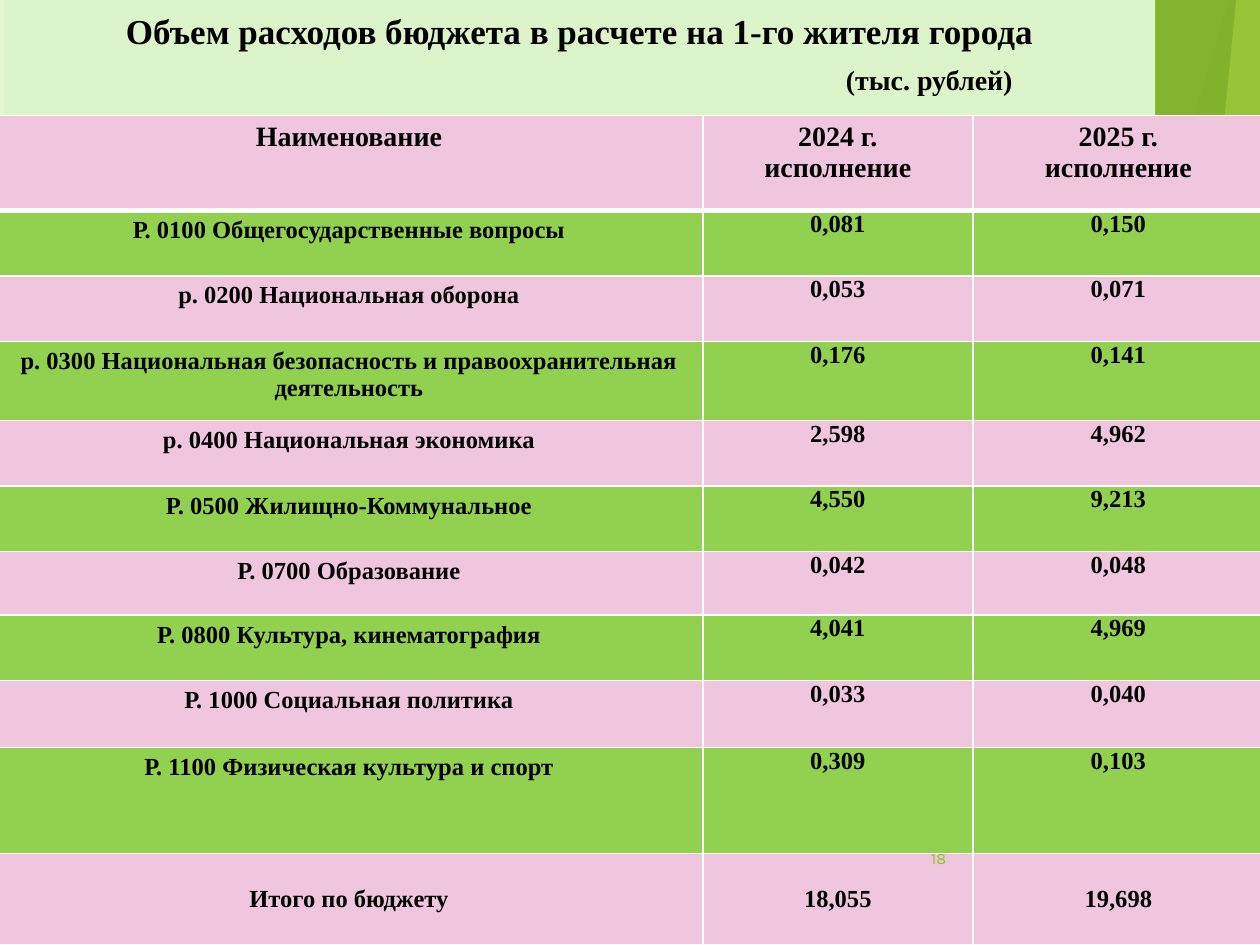
from lxml import etree
from pptx import Presentation
from pptx.dml.color import RGBColor
from pptx.enum import shapes, text
from pptx.oxml.ns import qn
from pptx.util import Cm, Pt

BLACK = RGBColor(0, 0, 0)
WHITE = RGBColor(0xFF, 0xFF, 0xFF)
BACKGROUND = RGBColor(0xEA, 0xF6, 0xD1)
TITLE_FILL = RGBColor(0xDB, 0xF4, 0xCA)
PINK = RGBColor(0xF0, 0xC6, 0xDE)
GREEN = RGBColor(0x92, 0xD0, 0x50)
LEAF = RGBColor(0x90, 0xC2, 0x26)
FOREST = RGBColor(0x3F, 0x78, 0x19)
LIME = RGBColor(0xC0, 0xE4, 0x74)

SERIF = "Times New Roman"
WIDTH, HEIGHT = 25.4, 19.05

TITLE = "Объем расходов бюджета в расчете на 1-го жителя города"
UNITS = "(тыс. рублей)"
PAGE_NUMBER = "18"

HEADER = ("Наименование", "2024 г.\nисполнение", "2025 г.\nисполнение")
# label, 2024, 2025, row height in cm
EXPENSES = [
    ("Р. 0100 Общегосударственные вопросы", "0,081", "0,150", 1.32),
    ("р. 0200 Национальная оборона", "0,053", "0,071", 1.32),
    ("р. 0300 Национальная безопасность и правоохранительная деятельность",
     "0,176", "0,141", 1.6),
    ("р. 0400 Национальная экономика", "2,598", "4,962", 1.32),
    ("Р. 0500 Жилищно-Коммунальное", "4,550", "9,213", 1.32),
    ("Р. 0700 Образование", "0,042", "0,048", 1.28),
    ("Р. 0800 Культура, кинематография", "4,041", "4,969", 1.32),
    ("Р. 1000 Социальная политика", "0,033", "0,040", 1.35),
    ("Р. 1100 Физическая культура и спорт", "0,309", "0,103", 2.14),
    ("Итого по бюджету", "18,055", "19,698", 1.83),
]
HEADER_HEIGHT = 1.91
COLUMN_WIDTHS = (14.27, 5.44, 5.87)

# Slanted bands on the right: top left x, bottom left x, colour, opacity in %
BANDS = [
    (24.77, 19.15, LEAF, 30),
    (20.02, 23.34, LEAF, 20),
    (19.48, 24.64, FOREST, 70),
    (24.92, 23.04, LIME, 70),
    (22.43, 25.04, LEAF, 65),
]


def add_band(slide, top_x, bottom_x, colour, opacity):
    builder = slide.shapes.build_freeform(Cm(top_x), 0)
    builder.add_line_segments([(Cm(bottom_x), Cm(HEIGHT)), (Cm(WIDTH), Cm(HEIGHT)),
                               (Cm(WIDTH), 0)])
    band = builder.convert_to_shape()
    band.shadow.inherit = False
    band.line.fill.background()
    band.fill.solid()
    band.fill.fore_color.rgb = colour
    colour_xml = band._element.spPr.find(qn("a:solidFill"))[0]
    etree.SubElement(colour_xml, qn("a:alpha"), val=str(opacity * 1000))


def style(para, size, colour=BLACK, name=SERIF, bold=True):
    para.font.size = Pt(size)
    para.font.name = name
    para.font.bold = bold
    para.font.color.rgb = colour


def add_title(slide):
    box = slide.shapes.add_shape(shapes.MSO_SHAPE.RECTANGLE, Cm(0.08), 0, Cm(23.21), Cm(2.34))
    box.shadow.inherit = False
    box.fill.solid()
    box.fill.fore_color.rgb = TITLE_FILL
    box.line.fill.background()
    frame = box.text_frame
    frame.word_wrap = True
    frame.vertical_anchor = text.MSO_ANCHOR.TOP
    frame.margin_top = Cm(0.2)
    frame.text = f"{TITLE}\n{UNITS}"
    for para, size in zip(frame.paragraphs, (20, 16)):
        para.alignment = text.PP_ALIGN.CENTER
        style(para, size)
    units = frame.paragraphs[1]
    units.space_before = Pt(6)
    units._p.get_or_add_pPr().set("marL", str(Cm(14.1)))


def set_borders(cell, bottom=1, top=1):
    """White cell borders, with widths in points."""
    properties = cell._tc.get_or_add_tcPr()
    widths = {"a:lnL": 1, "a:lnR": 1, "a:lnT": top, "a:lnB": bottom}
    for index, (tag, width) in enumerate(widths.items()):
        line = etree.Element(qn(tag), w=str(Pt(width)))
        fill = etree.SubElement(line, qn("a:solidFill"))
        etree.SubElement(fill, qn("a:srgbClr"), val=str(WHITE))
        properties.insert(index, line)


def add_expenses(slide):
    rows = [HEADER] + [row[:3] for row in EXPENSES]
    heights = [HEADER_HEIGHT] + [row[3] for row in EXPENSES]
    last = len(rows) - 1
    table = slide.shapes.add_table(len(rows), len(HEADER), Cm(-0.1), Cm(2.33),
                                   Cm(sum(COLUMN_WIDTHS)), Cm(sum(heights))).table
    for column, width in zip(table.columns, COLUMN_WIDTHS):
        column.width = Cm(width)
    for r, (values, height) in enumerate(zip(rows, heights)):
        table.rows[r].height = Cm(height)
        for c, value in enumerate(values):
            cell = table.cell(r, c)
            cell.text = value
            cell.fill.solid()
            cell.fill.fore_color.rgb = GREEN if r % 2 else PINK
            if r and c:
                cell.margin_left = cell.margin_right = 0
                cell.margin_top = cell.margin_bottom = 0
            if r == last:
                cell.vertical_anchor = text.MSO_ANCHOR.MIDDLE
            for para in cell.text_frame.paragraphs:
                para.alignment = text.PP_ALIGN.CENTER
                style(para, 14 if r else 16)
            set_borders(cell, bottom=1 if r else 3, top=3 if r == 1 else 1)


def add_page_number(slide):
    box = slide.shapes.add_textbox(Cm(17.9), Cm(16.8), Cm(1.42), Cm(1.01))
    frame = box.text_frame
    frame.word_wrap = True
    frame.vertical_anchor = text.MSO_ANCHOR.MIDDLE
    frame.text = PAGE_NUMBER
    para = frame.paragraphs[0]
    para.alignment = text.PP_ALIGN.RIGHT
    style(para, 9, LEAF, "Karla", bold=False)


def main():
    deck = Presentation()
    deck.slide_width, deck.slide_height = Cm(WIDTH), Cm(HEIGHT)
    slide = deck.slides.add_slide(deck.slide_layouts[6])
    slide.background.fill.solid()
    slide.background.fill.fore_color.rgb = BACKGROUND
    for band in BANDS:
        add_band(slide, *band)
    add_title(slide)
    add_expenses(slide)
    add_page_number(slide)
    deck.save("out.pptx")


if __name__ == "__main__":
    main()
